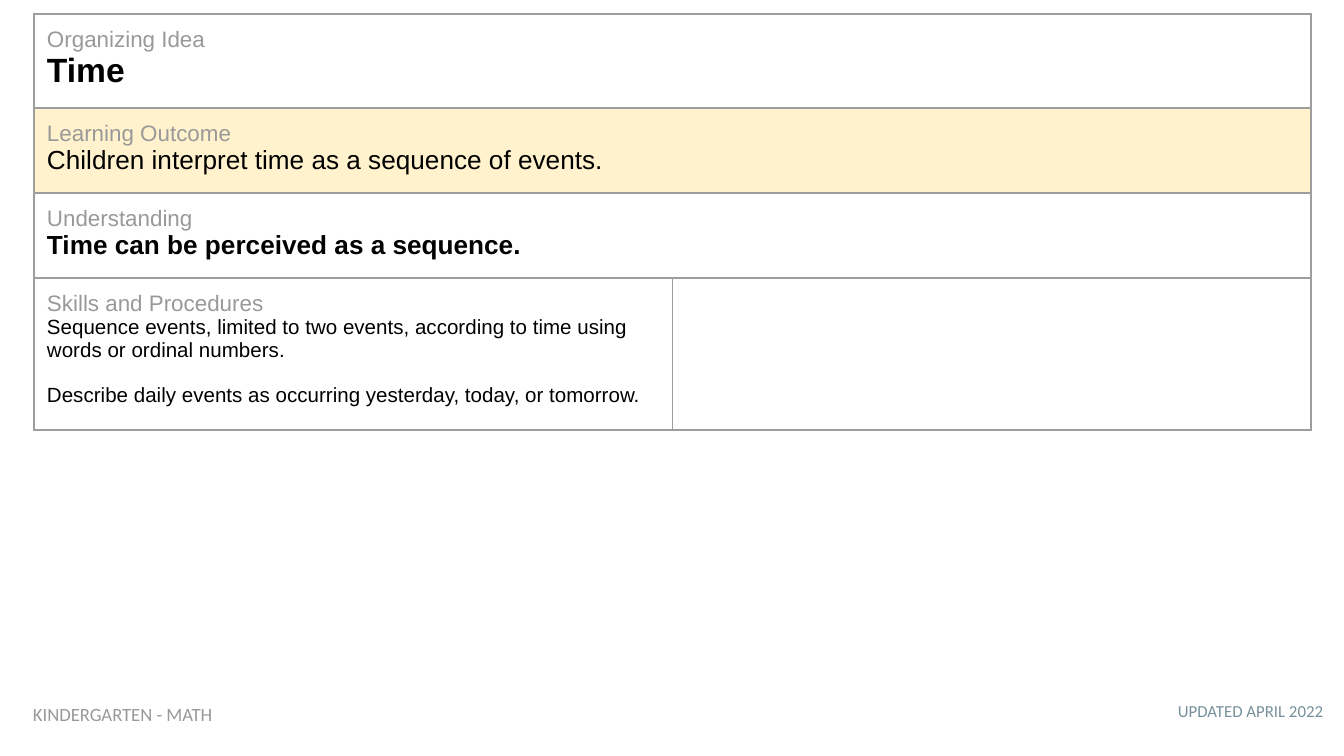
from lxml import etree
from pptx import Presentation
from pptx.dml.color import RGBColor
from pptx.enum.text import MSO_ANCHOR, PP_ALIGN
from pptx.oxml.ns import qn
from pptx.util import Emu, Pt

LEFT, RIGHT = PP_ALIGN.LEFT, PP_ALIGN.RIGHT
TOP = MSO_ANCHOR.TOP
EMU_PER_PX = 914400 / 134.4
BLANK_LAYOUT = 6
INSET = 13
COLORS = {
    "label": "999999",
    "body": "000000",
    "highlight": "FFF2CC",
    "plain": "FFFFFF",
    "border": "9E9E9E",
    "updated": "78909C",
}

# label, statements, statement size, bold, fill, row height
ROWS = [
    ("Organizing Idea", ["Time"], 18, True, "plain", 94),
    ("Learning Outcome", ["Children interpret time as a sequence of events."],
     14, False, "highlight", 85),
    ("Understanding", ["Time can be perceived as a sequence."], 14, True, "plain", 85),
    ("Skills and Procedures",
     ["Sequence events, limited to two events, according to time using words or ordinal numbers.",
      "Describe daily events as occurring yesterday, today, or tomorrow."],
     11, False, "plain", 152),
]


def px(length):
    return Emu(round(length * EMU_PER_PX))


def rgb(name):
    return RGBColor.from_string(COLORS[name])


def set_margins(holder):
    holder.margin_left = holder.margin_right = px(INSET)
    holder.margin_top = holder.margin_bottom = px(INSET)


def write(paragraph, text, size, color, font="Arial", bold=False):
    paragraph.text = text
    for run in paragraph.runs:
        run.font.name = font
        run.font.size = Pt(size)
        run.font.bold = bold
        run.font.color.rgb = rgb(color)


def add_caption(slide, text, box, size, color, align):
    shape = slide.shapes.add_textbox(*map(px, box))
    text_frame = shape.text_frame
    text_frame.word_wrap = True
    set_margins(text_frame)
    paragraph = text_frame.paragraphs[0]
    paragraph.alignment = align
    write(paragraph, text, size, color, font="Calibri")


def add_borders(cell):
    """Put four thin lines ahead of the fill, as the schema requires."""
    properties = cell._tc.get_or_add_tcPr()
    for index, side in enumerate(("a:lnL", "a:lnR", "a:lnT", "a:lnB")):
        line = etree.Element(qn(side), w=str(Pt(0.75)))
        fill = etree.SubElement(line, qn("a:solidFill"))
        etree.SubElement(fill, qn("a:srgbClr"), val=COLORS["border"])
        properties.insert(index, line)


def format_cell(cell, fill):
    set_margins(cell)
    cell.vertical_anchor = TOP
    cell.fill.solid()
    cell.fill.fore_color.rgb = rgb(fill)
    add_borders(cell)


def fill_cell(cell, label, statements, size, bold):
    text_frame = cell.text_frame
    write(text_frame.paragraphs[0], label, 12, "label")
    for index, statement in enumerate(statements):
        paragraph = text_frame.add_paragraph()
        write(paragraph, statement, size, "body", bold=bold)
        if index:
            paragraph.space_before = Pt(12)


def add_outcome_table(slide, left, top, width):
    height = sum(row[-1] for row in ROWS)
    shape = slide.shapes.add_table(len(ROWS), 2, *map(px, (left, top, width, height)))
    table = shape.table
    table.first_row = table.horz_banding = False
    for index, (label, statements, size, bold, fill, row_height) in enumerate(ROWS):
        table.rows[index].height = px(row_height)
        first, second = table.cell(index, 0), table.cell(index, 1)
        for cell in (first, second):
            format_cell(cell, fill)
        fill_cell(first, label, statements, size, bold)
        if index < len(ROWS) - 1:
            first.merge(second)


def main():
    presentation = Presentation()
    presentation.slide_width, presentation.slide_height = px(1344), px(756)
    slide = presentation.slides.add_slide(presentation.slide_layouts[BLANK_LAYOUT])
    add_caption(slide, "UPDATED APRIL 2022", (973, 691, 363, 47), 9, "updated", RIGHT)
    add_outcome_table(slide, left=34, top=14, width=1277)
    add_caption(slide, "KINDERGARTEN - MATH", (20, 692, 405, 50), 10, "label", LEFT)
    presentation.save("out.pptx")


if __name__ == "__main__":
    main()
